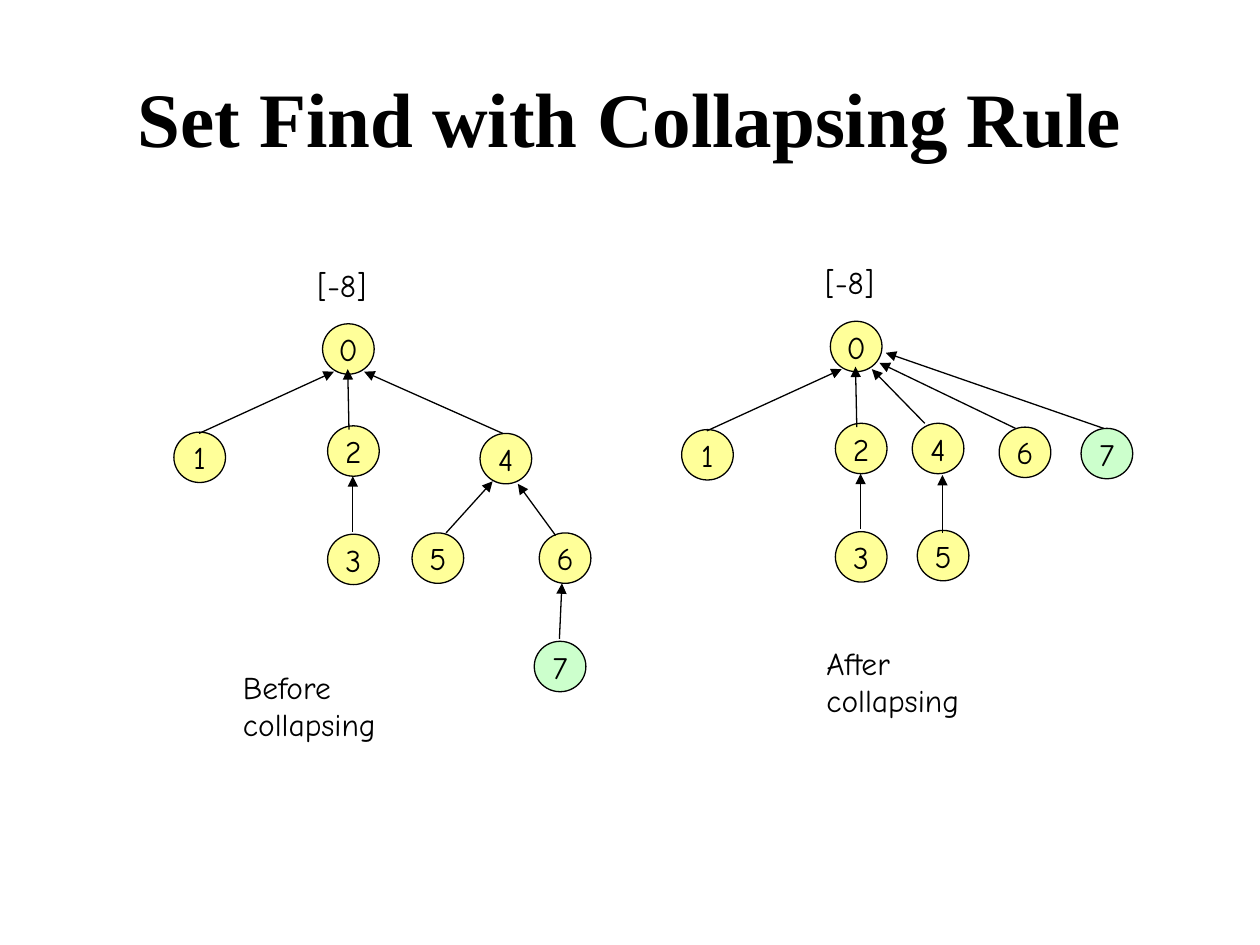
from lxml import etree
from pptx import Presentation
from pptx.dml.color import RGBColor
from pptx.enum.shapes import MSO_CONNECTOR, MSO_SHAPE
from pptx.enum.text import MSO_ANCHOR, PP_ALIGN
from pptx.oxml.ns import qn
from pptx.util import Inches, Pt

STRAIGHT = MSO_CONNECTOR.STRAIGHT
OVAL = MSO_SHAPE.OVAL
MIDDLE, TOP = MSO_ANCHOR.MIDDLE, MSO_ANCHOR.TOP
CENTER, LEFT = PP_ALIGN.CENTER, PP_ALIGN.LEFT

BLACK = RGBColor(0x00, 0x00, 0x00)
YELLOW = RGBColor(0xFF, 0xFF, 0x99)
GREEN = RGBColor(0xCC, 0xFF, 0xCC)

NODE_WIDTH, NODE_HEIGHT = 0.41, 0.4
LINE_WIDTH = Pt(0.75)
TITLE_FONT = {"name": "Times New Roman", "size": Pt(44), "bold": True}
BODY_FONT = {"name": "Comic Neue", "size": Pt(18), "bold": False}

SHARED_NODES = [("0", 2.56, 2.57), ("1", 1.38, 3.43), ("2", 2.6, 3.38), ("3", 2.6, 4.24)]
SHARED_ARROWS = [
    (1.58, 3.44, 2.65, 2.95),
    (2.77, 3.41, 2.76, 2.93),
    (2.8, 4.22, 2.8, 3.78),
]
BEFORE = {
    "offset": (0, 0),
    "nodes": [("4", 3.81, 3.44), ("5", 3.27, 4.23), ("6", 4.28, 4.23), ("7", 4.24, 5.09)],
    "arrows": [
        (3.99, 3.44, 2.89, 2.95),
        (3.54, 4.23, 3.91, 3.82),
        (4.41, 4.25, 4.11, 3.84),
        (4.44, 5.07, 4.46, 4.63),
    ],
    "caption": ("Before collapsing", 1.83, 5.25),
}
AFTER = {
    "offset": (4.03, -0.02),
    "nodes": [("4", 7.24, 3.36), ("5", 7.28, 4.21), ("6", 7.93, 3.39), ("7", 8.58, 3.4)],
    "arrows": [
        (7.34, 3.36, 6.92, 2.93),
        (7.48, 4.23, 7.48, 3.77),
        (8.06, 3.4, 6.98, 2.88),
        (8.76, 3.4, 7.03, 2.8),
    ],
    "caption": ("After collapsing", 6.46, 5.06),
}


def write_text(box, text, font, align, anchor, wrap):
    frame = box.text_frame
    frame.word_wrap = wrap
    frame.vertical_anchor = anchor
    para = frame.paragraphs[0]
    para.alignment = align
    span = para.add_run()
    span.text = text
    for name, value in font.items():
        setattr(span.font, name, value)
    span.font.color.rgb = BLACK


def add_label(page, text, left, top, width, height, font=BODY_FONT, align=LEFT, anchor=TOP):
    box = page.shapes.add_textbox(Inches(left), Inches(top), Inches(width), Inches(height))
    write_text(box, text, font, align, anchor, True)


def add_node(page, text, left, top):
    node = page.shapes.add_shape(
        OVAL, Inches(left), Inches(top), Inches(NODE_WIDTH), Inches(NODE_HEIGHT)
    )
    node.shadow.inherit = False
    node.fill.solid()
    node.fill.fore_color.rgb = GREEN if text == "7" else YELLOW
    node.line.color.rgb = BLACK
    node.line.width = LINE_WIDTH
    write_text(node, text, BODY_FONT, CENTER, MIDDLE, False)


def add_arrow(page, *ends):
    arrow = page.shapes.add_connector(STRAIGHT, *map(Inches, ends))
    arrow.line.color.rgb = BLACK
    arrow.line.width = LINE_WIDTH
    etree.SubElement(arrow.line._get_or_add_ln(), qn("a:tailEnd"), type="triangle")
    etree.SubElement(arrow._element.spPr, qn("a:effectLst"))


def add_tree(page, tree):
    dx, dy = tree["offset"]
    shared_nodes = [(text, x + dx, y + dy) for text, x, y in SHARED_NODES]
    shared_arrows = [(x1 + dx, y1 + dy, x2 + dx, y2 + dy) for x1, y1, x2, y2 in SHARED_ARROWS]
    for node in shared_nodes + tree["nodes"]:
        add_node(page, *node)
    for ends in shared_arrows + tree["arrows"]:
        add_arrow(page, *ends)
    add_label(page, "[-8]", 2.42 + dx, 2.06 + dy, 0.67, 0.4)
    add_label(page, *tree["caption"], 1.78, 0.7)


def main():
    deck = Presentation()
    deck.slide_width, deck.slide_height = Inches(10), Inches(7.5)
    page = deck.slides.add_slide(deck.slide_layouts[6])
    add_label(page, "Set Find with Collapsing Rule", 0.5, 0.3, 9, 1.25, TITLE_FONT, CENTER, MIDDLE)
    for tree in (BEFORE, AFTER):
        add_tree(page, tree)
    deck.save("out.pptx")


if __name__ == "__main__":
    main()
